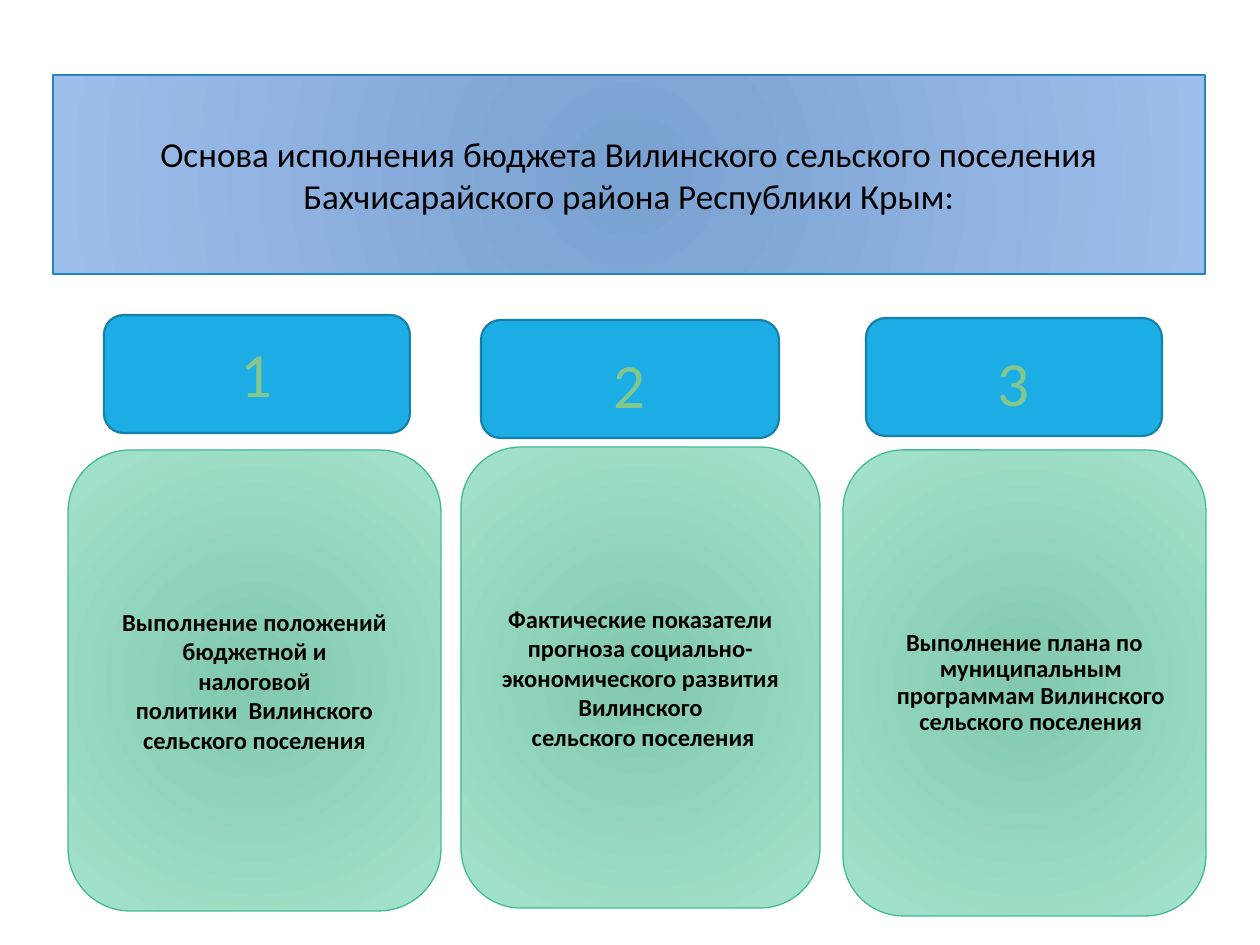
from lxml.etree import SubElement
from pptx import Presentation
from pptx.dml.color import RGBColor
from pptx.enum.shapes import MSO_SHAPE as Shape
from pptx.enum.text import MSO_ANCHOR as Anchor, MSO_AUTO_SIZE as AutoSize, PP_ALIGN as Align
from pptx.oxml.ns import qn
from pptx.util import Pt

PX = 914400 // 126
FONT = "Calibri"
BLACK = "000000"
BLUE = ("79A1D1", "9EBEEB")
GREEN = ("81C8AF", "A4E3CB")
SIDE, EDGE = 13, 6  # usual text insets: left and right, top and bottom

TITLE = ("Основа исполнения бюджета Вилинского сельского поселения "
         "Бахчисарайского района Республики Крым:")
TITLE_AT = (53, 75, 1152, 199)

# number, its box, extra top inset, card box, card paragraphs
COLUMNS = [
    ("1", (104, 315, 306, 118), -4, (68, 450, 373, 461),
     ["Выполнение положений", "бюджетной и", "налоговой",
      "политики  Вилинского сельского поселения"]),
    ("2", (481, 320, 298, 118), 8, (461, 447, 359, 461),
     ["Фактические показатели прогноза социально-экономического развития Вилинского",
      " сельского поселения"]),
    ("3", (866, 318, 296, 118), 8, (843, 450, 363, 466),
     ["Выполнение плана по муниципальным программам Вилинского сельского поселения"]),
]


def color(value):
    return RGBColor.from_string(value)


def place(shape, at):
    shape.left, shape.top, shape.width, shape.height = (v * PX for v in at)


def outline(shape, value, width):
    shape.line.color.rgb = color(value)
    shape.line.width = Pt(width)


def radial_fill(shape, stops):
    """Fill with a circular gradient from the centre outwards."""
    shape.fill.gradient()
    for stop, value, position in zip(shape.fill.gradient_stops, stops, (0, 1)):
        stop.color.rgb = color(value)
        stop.position = position
    gradient = shape._element.spPr.find(qn("a:gradFill"))
    gradient.remove(gradient.find(qn("a:lin")))
    circle = SubElement(gradient, qn("a:path"), path="circle")
    SubElement(circle, qn("a:fillToRect"), l="100000", t="100000", r="100000", b="100000")


def write(shape, lines, size, value=BLACK, bold=False, side=SIDE, top=EDGE):
    frame = shape.text_frame
    frame.word_wrap = True
    frame.auto_size = AutoSize.NONE
    frame.vertical_anchor = Anchor.MIDDLE
    frame.margin_left = frame.margin_right = side * PX
    frame.margin_top, frame.margin_bottom = top * PX, EDGE * PX
    for index, line in enumerate(lines):
        para = frame.paragraphs[0] if index == 0 else frame.add_paragraph()
        para.alignment = Align.CENTER
        span = para.add_run()
        span.text = line
        span.font.name, span.font.size, span.font.bold = FONT, Pt(size), bold
        span.font.color.rgb = color(value)


def add_box(page, at):
    box = page.shapes.add_shape(Shape.ROUNDED_RECTANGLE, 0, 0, 0, 0)
    box.shadow.inherit = False
    place(box, at)
    return box


def add_title(page):
    title = page.shapes.title
    place(title, TITLE_AT)
    geometry = SubElement(title._element.spPr, qn("a:prstGeom"), prst="roundRect")
    SubElement(geometry, qn("a:avLst"))
    radial_fill(title, BLUE)
    outline(title, "2683C6", 0.75)
    write(title, [TITLE], 20)


def add_column(page, number, number_at, drop, card_at, lines):
    badge = add_box(page, number_at)
    badge.fill.solid()
    badge.fill.fore_color.rgb = color("1CADE4")
    outline(badge, "1580A9", 1.25)
    write(badge, [number], 36, "84C78C", top=EDGE + drop)

    card = add_box(page, card_at)
    radial_fill(card, GREEN)
    outline(card, "42BA97", 0.75)
    hanging = len(lines) == 1
    write(card, lines, 14, bold=True, side=EDGE if hanging else SIDE)
    if hanging:
        para = card.text_frame.paragraphs[0]
        para.line_spacing = 0.9
        properties = para._p.get_or_add_pPr()
        properties.set("marL", str(SIDE * PX))
        properties.set("indent", str(-SIDE * PX))


def main():
    deck = Presentation()
    deck.slide_width, deck.slide_height = 1260 * PX, 945 * PX
    page = deck.slides.add_slide(deck.slide_layouts[5])
    add_title(page)
    for column in COLUMNS:
        add_column(page, *column)
    deck.save("out.pptx")


if __name__ == "__main__":
    main()
